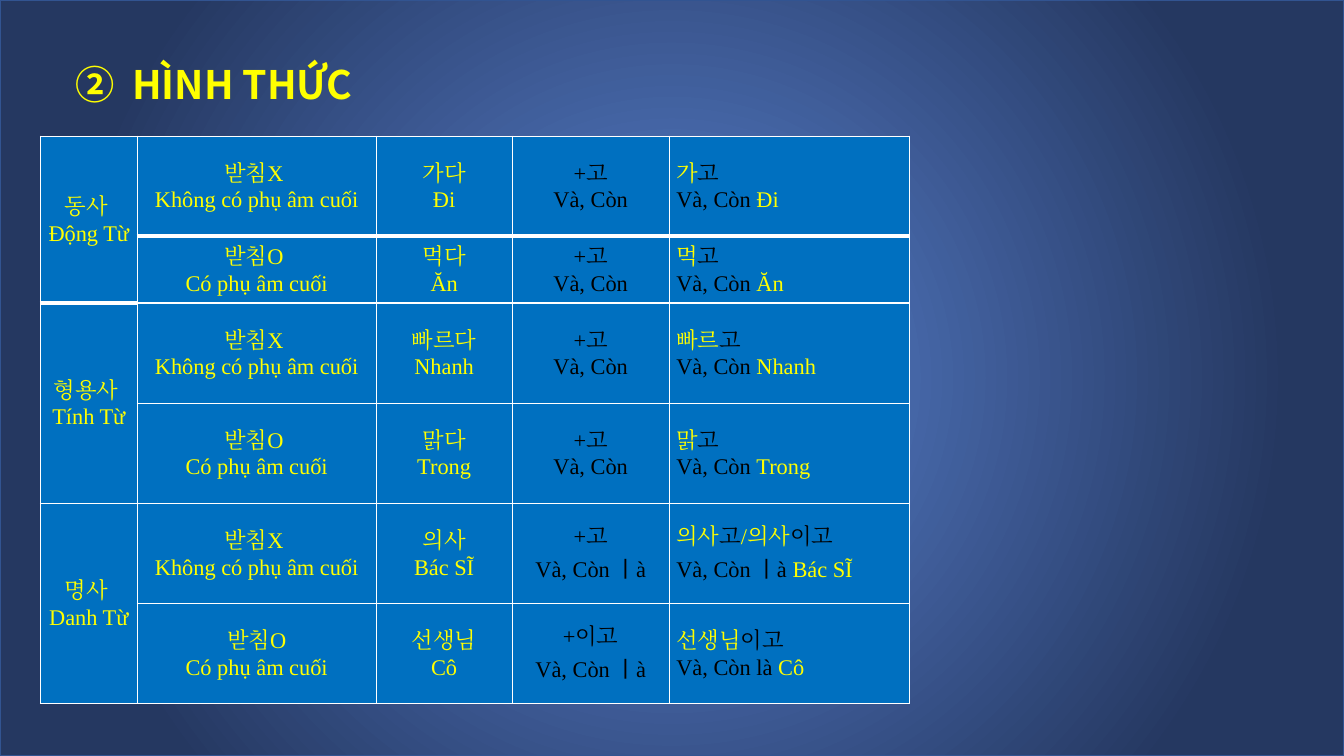
from lxml import etree
from pptx import Presentation
from pptx import util as u
from pptx.dml.color import RGBColor
from pptx.enum import shapes, text
from pptx.oxml import ns

YELLOW = RGBColor(0xFF, 0xFF, 0x00)
BLACK = RGBColor(0x00, 0x00, 0x00)
WHITE = RGBColor(0xFF, 0xFF, 0xFF)
CELL_BLUE = RGBColor(0x00, 0x70, 0xC0)
GLOW_BLUE = RGBColor(0x5A, 0x83, 0xD3)
NIGHT_BLUE = RGBColor(0x25, 0x38, 0x61)
EDGE_BLUE = RGBColor(0x32, 0x54, 0x91)
SERIF, SANS = "Times New Roman", "Noto Sans CJK KR"
CENTER, LEFT = text.PP_ALIGN.CENTER, text.PP_ALIGN.LEFT

WORD_CLASSES = [("동사 ", "Động Từ"), ("형용사 ", "Tính Từ"), ("명사 ", "Danh Từ")]
NO_FINAL = ("받침X ", "Không có phụ âm cuối")
FINAL = ("받침O ", "Có phụ âm cuối")
AND, AND_IS = "Và, Còn", "Và, Còn ㅣà"
WORDS = [
    (NO_FINAL, "가", "다", "Đi", ["고"], AND, AND),
    (FINAL, "먹", "다", "Ăn", ["고"], AND, AND),
    (NO_FINAL, "빠르", "다", "Nhanh", ["고"], AND, AND),
    (FINAL, "맑", "다", "Trong", ["고"], AND, AND),
    (NO_FINAL, "의사", "", "Bác SĨ", ["고", "이고"], AND_IS, AND_IS),
    (("받침O", FINAL[1]), "선생님", "", "Cô", ["이고"], AND_IS, "Và, Còn là"),
]
COLUMN_SHARES = [2.44, 6.02, 3.43, 3.96, 6.05]
ROW_SHARES = [2.52, 1.68, 2.52, 2.52, 2.52, 2.52]


def add_child(parent, tag, **attributes):
    """Append a drawing element with the given attributes."""
    child = etree.SubElement(parent, ns.qn("a:" + tag))
    for name, value in attributes.items():
        child.set(name, str(value))
    return child


def add_span(para, words, size=16, font=SERIF, east=SERIF, color=YELLOW, bold=False):
    """Add one formatted span of text to a paragraph."""
    span = para.add_run()
    span.text = words
    span.font.size = u.Pt(size)
    span.font.name = font
    span.font.bold = bold
    span.font.color.rgb = color
    add_child(span.font._element, "ea", typeface=east)


def draw_background(page, width, height):
    """Cover the page with a radial gradient behind everything else."""
    panel = page.shapes.add_shape(shapes.MSO_SHAPE.RECTANGLE, 0, 0, width, height)
    panel.shadow.inherit = False
    panel.line.color.rgb = EDGE_BLUE
    panel.line.width = u.Pt(1)
    panel.fill.gradient()
    gradient = panel._element.spPr.find(ns.qn("a:gradFill"))
    for child in list(gradient):
        gradient.remove(child)
    stops = add_child(gradient, "gsLst")
    for position, color in ((0, GLOW_BLUE), (80000, NIGHT_BLUE)):
        add_child(add_child(stops, "gs", pos=position), "srgbClr", val=color)
    route = add_child(gradient, "path", path="circle")
    add_child(route, "fillToRect", l=50000, t=50000, r=50000, b=50000)
    page.shapes._spTree.insert(2, panel._element)


def draw_title(page, words, left, top, width, height):
    """Place the numbered title in the title placeholder."""
    title = page.shapes.title
    title.left, title.top, title.width, title.height = left, top, width, height
    frame = title.text_frame
    frame.word_wrap = False
    frame.auto_size = text.MSO_AUTO_SIZE.SHAPE_TO_FIT_TEXT
    frame.vertical_anchor = text.MSO_ANCHOR.TOP
    para = frame.paragraphs[0]
    para.alignment = text.PP_ALIGN.JUSTIFY
    para.line_spacing = 1.07
    para.space_before, para.space_after = u.Pt(0), u.Pt(8)
    properties = para._element.get_or_add_pPr()
    properties.set("marL", str(u.Cm(1.43)))
    properties.set("indent", str(u.Cm(-1.43)))
    add_child(properties, "buFont", typeface="+mj-lt")
    add_child(properties, "buAutoNum", type="circleNumDbPlain", startAt=2)
    add_span(para, words, size=28, font=SANS, east=SANS, bold=True)


def format_cell(cell, thick):
    """Give a cell its fill, margins and white borders, thick on the named sides."""
    cell.fill.solid()
    cell.fill.fore_color.rgb = CELL_BLUE
    cell.vertical_anchor = text.MSO_ANCHOR.MIDDLE
    cell.margin_left = cell.margin_right = u.Cm(0.18)
    cell.margin_top = cell.margin_bottom = 0
    properties = cell._tc.get_or_add_tcPr()
    for index, side in enumerate("LRTB"):
        width = u.Pt(3 if side in thick else 1)
        border = add_child(properties, "ln" + side, w=width)
        add_child(add_child(border, "solidFill"), "srgbClr", val=WHITE)
        properties.insert(index, border)


def write_cell(cell, lines, align=CENTER):
    """Write lines, each a list of (words, colour) spans, into a cell."""
    frame = cell.text_frame
    for index, spans in enumerate(lines):
        para = frame.add_paragraph() if index else frame.paragraphs[0]
        para.alignment = align
        para.line_spacing = 1.07
        for words, color in spans:
            add_span(para, words, color=color, east=SANS if "ㅣ" in words else SERIF)


def draw_forms_table(page, left, top, width, height):
    """Draw the table of word classes and their connected forms."""
    frame = page.shapes.add_table(len(WORDS), len(COLUMN_SHARES), left, top, width, height)
    table = frame.table
    table.first_row = table.horz_banding = False
    for column, share in zip(table.columns, COLUMN_SHARES):
        column.width = int(width * share / sum(COLUMN_SHARES))
    for row, share in zip(table.rows, ROW_SHARES):
        row.height = int(height * share / sum(ROW_SHARES))
    for r in range(len(WORDS)):
        for c in range(len(COLUMN_SHARES)):
            thick_row = 0 if c else 1
            thick = {thick_row: "B", thick_row + 1: "T"}.get(r, "")
            format_cell(table.cell(r, c), thick)
    for index, names in enumerate(WORD_CLASSES):
        head = table.cell(2 * index, 0)
        head.merge(table.cell(2 * index + 1, 0))
        write_cell(head, [[(name, YELLOW)] for name in names])
    for r, (condition, stem, suffix, meaning, endings, link, result) in enumerate(WORDS):
        write_cell(table.cell(r, 1), [[(line, YELLOW)] for line in condition])
        write_cell(table.cell(r, 2), [[(stem + suffix, YELLOW)], [(meaning, YELLOW)]])
        write_cell(table.cell(r, 3), [[("+" + endings[0], BLACK)], [(link, BLACK)]])
        forms = []
        for index, ending in enumerate(endings):
            forms += [("/" * index + stem, YELLOW), (ending, BLACK)]
        write_cell(table.cell(r, 4), [forms, [(result + " ", BLACK), (meaning, YELLOW)]], LEFT)


def main():
    """Build and save the deck."""
    deck = Presentation()
    deck.slide_width, deck.slide_height = u.Cm(33.87), u.Cm(19.05)
    page = deck.slides.add_slide(deck.slide_layouts[5])
    draw_background(page, deck.slide_width, deck.slide_height)
    draw_title(page, "HÌNH THỨC", u.Cm(1.65), u.Cm(1.3), u.Cm(7.8), u.Cm(2.95))
    draw_forms_table(page, u.Cm(1.02), u.Cm(3.43), u.Cm(21.9), u.Cm(14.3))
    deck.save("out.pptx")


if __name__ == "__main__":
    main()
